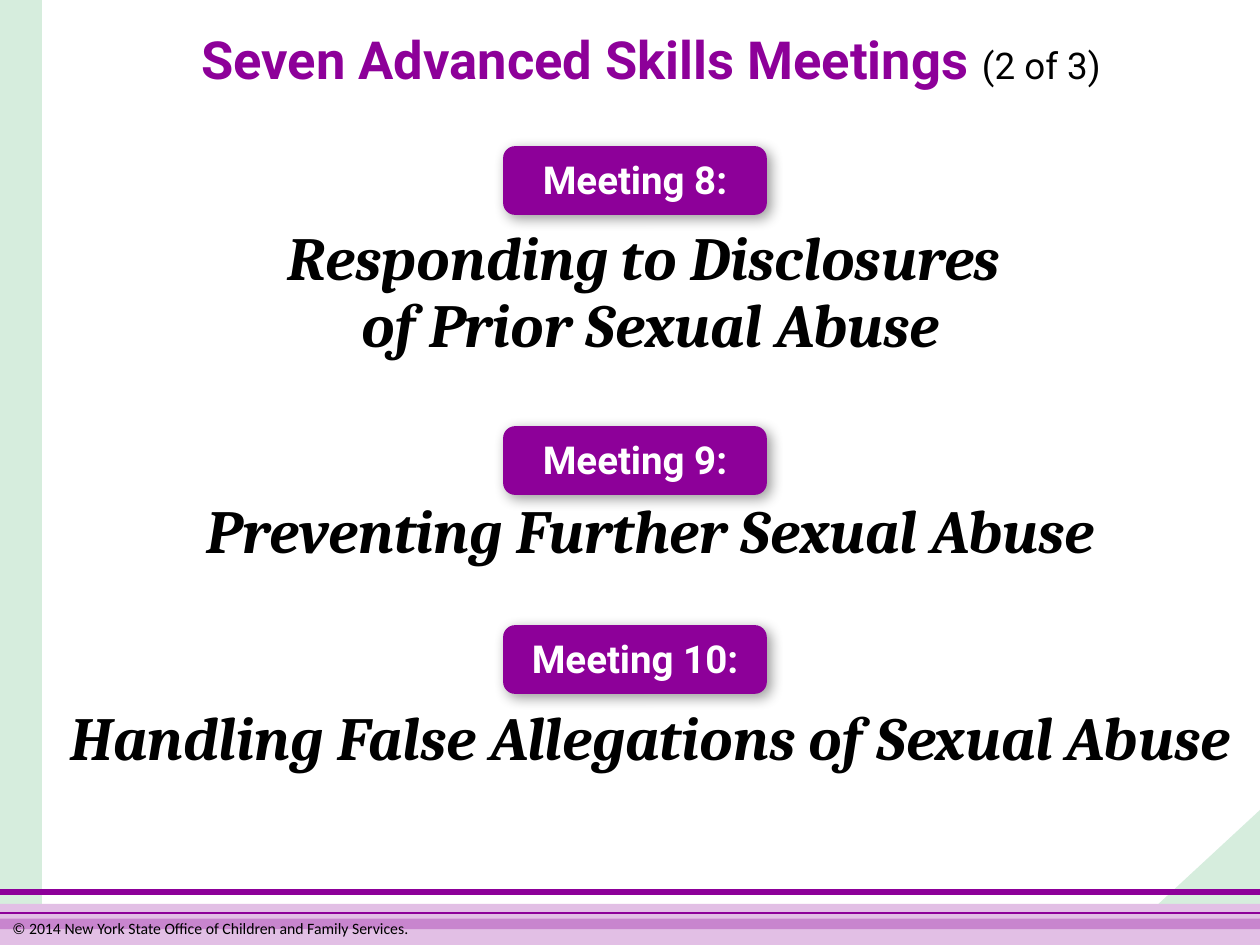
from lxml import etree
from pptx import Presentation
from pptx import util as u
from pptx.dml.color import RGBColor
from pptx.enum import shapes, text
from pptx.oxml import parse_xml
from pptx.oxml.ns import nsdecls, qn

PX = 914400 / 126
COLORS = {"purple": "8D0099", "lilac": "E2BFE5", "mint": "D6EDDD",
          "black": "000000", "white": "FFFFFF"}


def box(*lengths):
    return [u.Emu(round(length * PX)) for length in lengths]


def add_run(paragraph, words, color, **formats):
    run = paragraph.add_run()
    run.text = words
    run.font.color.rgb = RGBColor.from_string(COLORS[color])
    for name, value in formats.items():
        setattr(run.font, name, value)


presentation = Presentation()
presentation.slide_width, presentation.slide_height = box(1260, 945)
slide = presentation.slides.add_slide(presentation.slide_layouts[1])

# Background panels
panels = [
    (shapes.MSO_SHAPE.RIGHT_TRIANGLE, (1119, 804, 136, 147), "mint", 270),
    (shapes.MSO_SHAPE.RECTANGLE, (0, 0, 42, 945), "mint", 0),
    (shapes.MSO_SHAPE.RECTANGLE, (0, 904, 1260, 42), "lilac", 0),
]
for kind, place, color, rotation in panels:
    shape = slide.shapes.add_shape(kind, *box(*place))
    shape.rotation = rotation
    shape.shadow.inherit = False
    shape.fill.solid()
    shape.fill.fore_color.rgb = RGBColor.from_string(COLORS[color])
    shape.line.fill.background()

# Footer rules: height, width in points, opacity in percent
for y, width, opacity in [(892, 3, 100), (924, 6, 30), (913, 0.75, 100)]:
    rule = slide.shapes.add_connector(
        shapes.MSO_CONNECTOR.STRAIGHT, *box(1260, y, 0, y))
    rule.line.width = u.Pt(width)
    rule.line.color.rgb = RGBColor.from_string(COLORS["purple"])
    properties = rule.element.spPr
    etree.SubElement(properties, qn("a:effectLst"))
    if opacity < 100:
        tint = properties.find(".//" + qn("a:srgbClr"))
        etree.SubElement(tint, qn("a:alpha"), val=str(opacity * 1000))

# Copyright line
footer = slide.shapes.add_textbox(*box(0, 913, 1260, 32)).text_frame
footer.word_wrap = True
add_run(footer.paragraphs[0],
        "© 2014 New York State Office of Children and Family Services.",
        "black", name="Calibri", size=u.Pt(9))

# Title and body lie above the background
title, body = slide.placeholders
places = [(title, (42, -10, 1218, 147)), (body, (42, 220, 1218, 645))]
for placeholder, place in places:
    sides = ("left", "top", "width", "height")
    for side, length in zip(sides, box(*place)):
        setattr(placeholder, side, length)
    placeholder.text_frame.auto_size = text.MSO_AUTO_SIZE.NONE
    placeholder.element.getparent().append(placeholder.element)

paragraph = title.text_frame.paragraphs[0]
paragraph.alignment = text.PP_ALIGN.CENTER
paragraph.line_spacing = u.Pt(30)
add_run(paragraph, "Seven Advanced Skills Meetings ", "purple",
        name="Roboto", size=u.Pt(30), bold=True)
add_run(paragraph, "(2 of 3)", "black",
        name="Roboto", size=u.Pt(21), bold=False)

# Meeting topics
topics = [
    ("Responding to Disclosures ", "of Prior Sexual Abuse"),
    ("Preventing Further Sexual Abuse",),
    ("Handling False Allegations of Sexual Abuse",),
]
topic_format = {"alignment": text.PP_ALIGN.CENTER, "line_spacing": u.Pt(38),
                "space_before": u.Pt(0), "space_after": u.Pt(80)}
for index, lines in enumerate(topics):
    frame = body.text_frame
    paragraph = frame.add_paragraph() if index else frame.paragraphs[0]
    for name, value in topic_format.items():
        setattr(paragraph, name, value)
    properties = paragraph._p.get_or_add_pPr()
    properties.set("marL", "0")
    properties.set("indent", "0")
    etree.SubElement(properties, qn("a:buNone"))
    for number, line in enumerate(lines):
        if number:
            paragraph.add_line_break()
        add_run(paragraph, line, "black", name="Cambria", size=u.Pt(35),
                bold=True, italic=True)

# Meeting labels
SHADOW = (f'<a:outerShdw {nsdecls("a")} blurRad="101600" dist="38100" '
          'dir="2700000" algn="tl" rotWithShape="0"><a:srgbClr val="000000">'
          '<a:alpha val="40000"/></a:srgbClr></a:outerShdw>')
for number, top in [(8, 147), (9, 427), (10, 626)]:
    label = slide.shapes.add_shape(
        shapes.MSO_SHAPE.ROUNDED_RECTANGLE, *box(504, top, 262, 67))
    label.fill.solid()
    label.fill.fore_color.rgb = RGBColor.from_string(COLORS["purple"])
    label.line.color.rgb = RGBColor.from_string(COLORS["purple"])
    label.line.width = u.Pt(1)
    label.shadow.inherit = False
    label.element.spPr.find(qn("a:effectLst")).append(parse_xml(SHADOW))

    caption = slide.shapes.add_textbox(*box(500, top + 3, 270, 59)).text_frame
    caption.word_wrap = True
    caption.paragraphs[0].alignment = text.PP_ALIGN.CENTER
    add_run(caption.paragraphs[0], f"Meeting {number}:", "white",
            name="Roboto", size=u.Pt(22), bold=True)

presentation.save("out.pptx")
